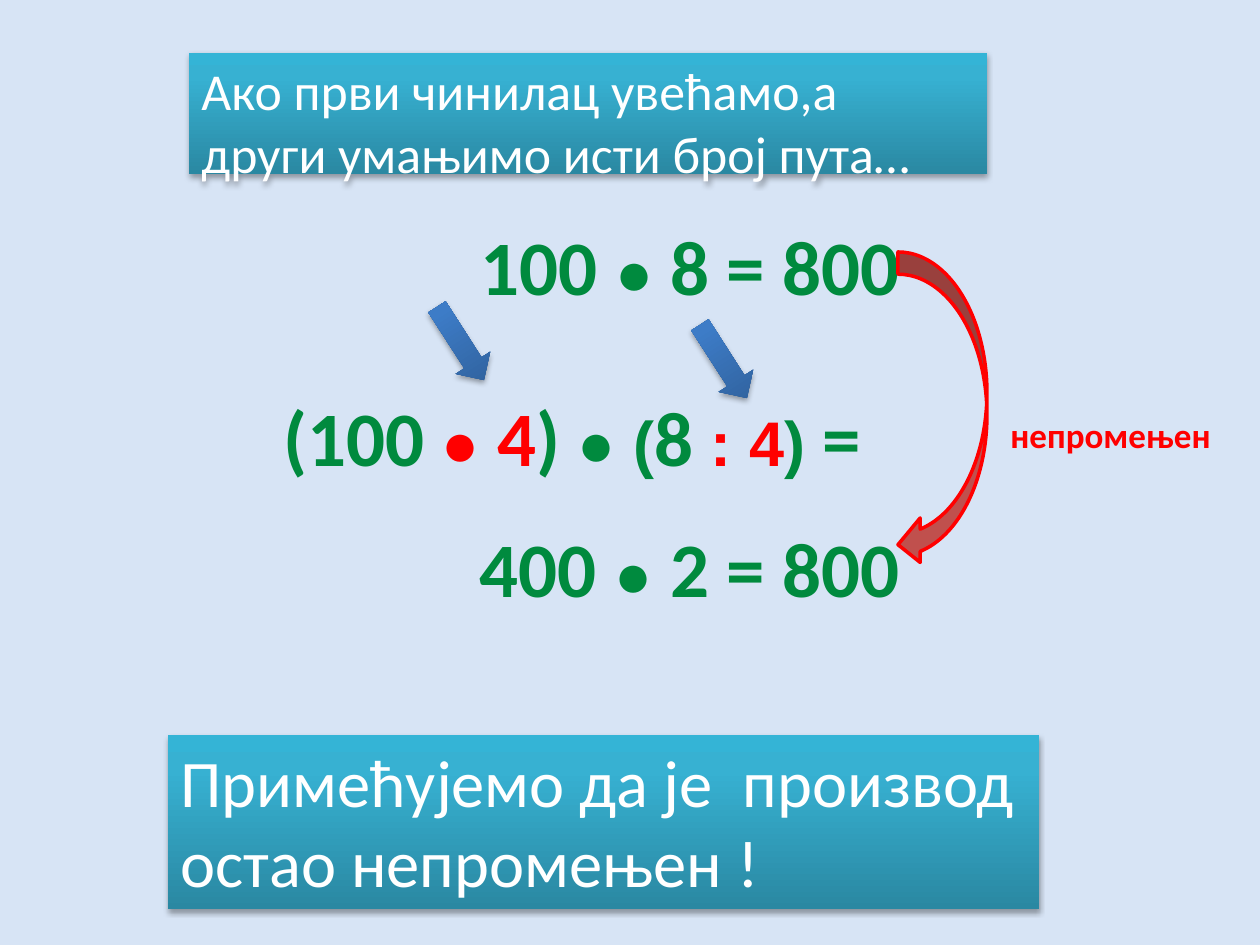
"""Build the slide on a product that stays the same."""
from lxml import etree
from pptx import Presentation
from pptx.dml.color import RGBColor
from pptx.enum.shapes import MSO_SHAPE
from pptx.enum.text import MSO_ANCHOR, PP_ALIGN
from pptx.util import Emu, Pt

RECT, DOWN, CURVED = MSO_SHAPE.RECTANGLE, MSO_SHAPE.DOWN_ARROW, MSO_SHAPE.CURVED_LEFT_ARROW
MIDDLE, TOP = MSO_ANCHOR.MIDDLE, MSO_ANCHOR.TOP
CENTER, LEFT = PP_ALIGN.CENTER, PP_ALIGN.LEFT
PX = 914400 / 126
INSET = 13
NS = "http://schemas.openxmlformats.org/drawingml/2006/main"
HEX = {
    "back": "D7E4F5", "green": "008A3E", "red": "FF0000", "white": "FFFFFF", "brick": "C0504D",
    "teal": ("2A88A2", "37B1D2", "34B4D6"), "blue": ("2F5F99", "3D7CC7", "3A7CCB"),
}


def write(frame, runs, anchor=TOP, align=LEFT):
    frame.word_wrap = True
    frame.vertical_anchor = anchor
    para = frame.paragraphs[0]
    para.alignment = align
    for text, size, color, face, bold in runs:
        run = para.add_run()
        run.text = text
        run.font.size = Pt(size)
        run.font.name = face
        run.font.bold = bold
        run.font.color.rgb = RGBColor.from_string(HEX[color])


def add_glossy(kind, box, tone):
    shape = slide.shapes.add_shape(kind, *[Emu(round(n * PX)) for n in box])
    shape.line.fill.background()
    shape.fill.gradient()
    shape.fill.gradient_angle = 90
    stops = shape.fill.gradient_stops
    stops[0].position, stops[1].position = 0, 1
    for stop, color in zip(stops, HEX[tone][::2]):
        stop.color.rgb = RGBColor.from_string(color)
    grad = shape.element.spPr.find(f"{{{NS}}}gradFill")
    grad[0].insert(1, etree.fromstring(
        f'<a:gs xmlns:a="{NS}" pos="80000"><a:srgbClr val="{HEX[tone][1]}"/></a:gs>'))
    grad.find(f"{{{NS}}}lin").set("ang", "16200000")
    shape.element.spPr.append(etree.fromstring(
        f'<a:effectLst xmlns:a="{NS}"><a:outerShdw blurRad="40000" dist="23000" dir="5400000"'
        ' rotWithShape="0"><a:srgbClr val="000000"><a:alpha val="35000"/></a:srgbClr>'
        '</a:outerShdw></a:effectLst>'))
    return shape


deck = Presentation()
deck.slide_width = Emu(round(1260 * PX))
deck.slide_height = Emu(round(945 * PX))
slide = deck.slides.add_slide(deck.slide_layouts[6])
slide.background.fill.solid()
slide.background.fill.fore_color.rgb = RGBColor.from_string(HEX["back"])

panels = [
    ((168, 735, 871, 174), 38, "Примећујемо да је  производ остао непромењен !"),
    ((189, 53, 798, 121), 29.6, "Ако први чинилац увећамо,а други умањимо исти број пута…"),
]
for box, size, text in panels:
    panel = add_glossy(RECT, box, "teal")
    write(panel.text_frame, [(text, size, "white", "Calibri", False)])

BIG, DOT = (44, "Calibri"), (36, "Arial")
sums = [
    (5, 357, 0, [
        ("(100 ", BIG, "green"), ("●", DOT, "red"), (" 4", BIG, "red"), (") ", BIG, "green"),
        ("● (", DOT, "green"), ("8 ", BIG, "green"), (": 4", DOT, "red"), (") ", DOT, "green"),
        ("=", BIG, "green")]),
    (10, 186, 226, [("100 ", BIG, "green"), ("● ", DOT, "green"), ("8 = 800", BIG, "green")]),
    (53, 488, 139, [("400 ", BIG, "green"), ("●", DOT, "green"), (" 2 = 800", BIG, "green")]),
]
for left, top, shift, parts in sums:
    label = slide.shapes.add_textbox(*[Emu(round(n * PX)) for n in (left, top, 1134, 158)])
    label.text_frame.margin_left = Emu(round((INSET + shift) * PX))
    runs = [(text, size, color, face, True) for text, (size, face), color in parts]
    write(label.text_frame, runs, MIDDLE, CENTER)

curve = slide.shapes.add_shape(CURVED, *[Emu(round(n * PX)) for n in (898, 252, 89, 315)])
curve.shadow.inherit = False
curve.fill.solid()
curve.fill.fore_color.rgb = RGBColor.from_string(HEX["brick"])
curve.line.color.rgb = RGBColor.from_string(HEX["red"])
curve.line.width = Pt(2)

note = slide.shapes.add_textbox(*[Emu(round(n * PX)) for n in (998, 407, 231, 55)])
write(note.text_frame, [("непромењен", 20, "red", "Calibri", True)])

for left, top in ((440, 300), (703, 318)):
    arrow = add_glossy(DOWN, (left, top, 41, 87), "blue")
    arrow.rotation = 327.3

deck.save("out.pptx")
